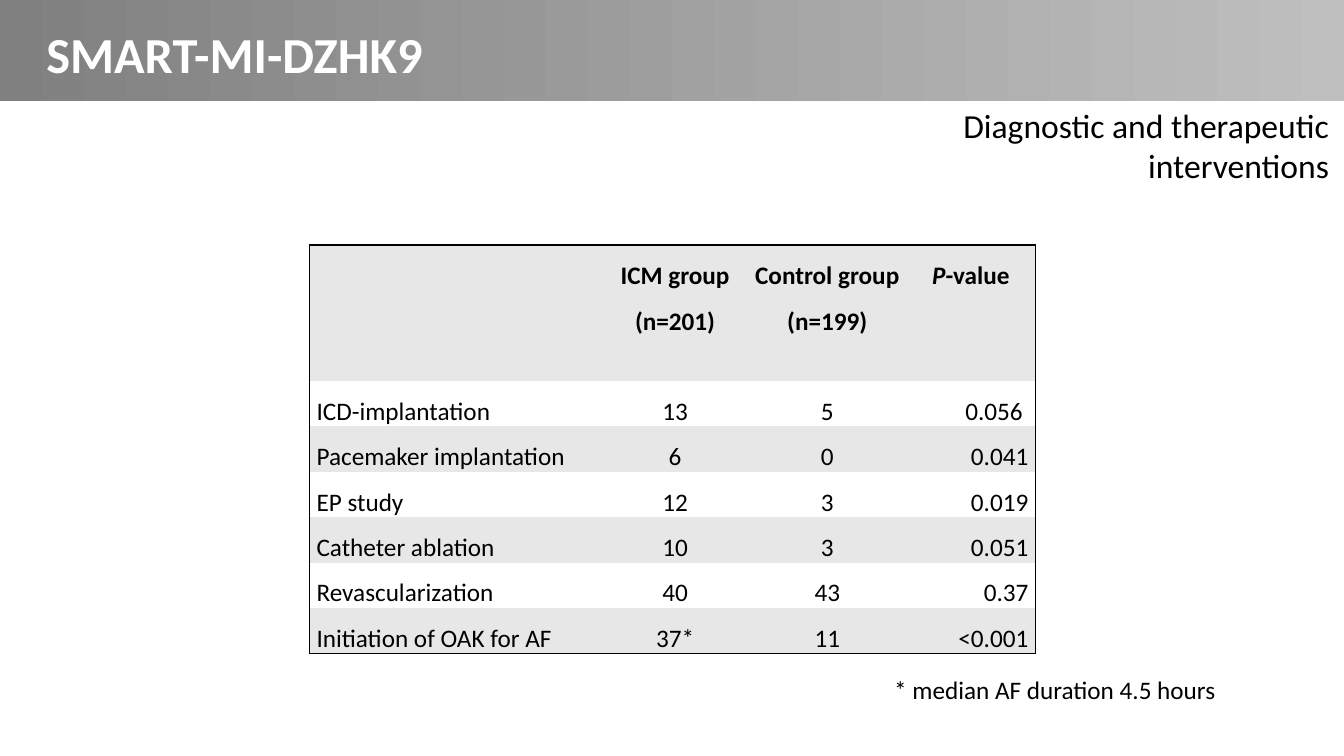
from dataclasses import dataclass

from lxml.etree import SubElement
from pptx import Presentation
from pptx.dml.color import RGBColor
from pptx.enum.shapes import MSO_SHAPE
from pptx.enum.text import MSO_ANCHOR, PP_ALIGN
from pptx.oxml.ns import qn
from pptx.slide import Slide
from pptx.table import _Cell
from pptx.text.text import TextFrame, _Paragraph
from pptx.util import Inches, Length, Pt

BLACK = RGBColor(0x00, 0x00, 0x00)
WHITE = RGBColor(0xFF, 0xFF, 0xFF)
BAND = RGBColor(0xE7, 0xE7, 0xE7)
BAR_DARK = RGBColor(0x80, 0x80, 0x80)
BAR_LIGHT = RGBColor(0xBF, 0xBF, 0xBF)

GRID_COLUMNS, GRID_ROWS = 133.3, 75
COLUMN_WIDTHS = (29, 14.5, 15.7, 12.8)
HEADER_ROWS, BODY_ROWS = 13.5, 4.5


@dataclass(frozen=True)
class Area:
    """Place on the slide, in grid columns and rows."""
    column: float
    row: float
    columns: float
    rows: float


@dataclass(frozen=True)
class Label:
    text: str
    area: Area
    size: float
    color: RGBColor = BLACK
    bold: bool = False
    align: PP_ALIGN = PP_ALIGN.RIGHT
    padded: bool = True


@dataclass(frozen=True)
class Intervention:
    name: str
    icm: str
    control: str
    p_value: str


LABELS = (
    Label("SMART-MI-DZHK9", Area(4.6, 2.3, 102.2, 6.1), 36, WHITE, True, PP_ALIGN.LEFT, False),
    Label("Diagnostic and therapeutic interventions", Area(76.8, 9.9, 56, 9), 24),
    Label("* median AF duration 4.5 hours ", Area(71.6, 66.4, 50.5, 4), 18),
)
HEADERS = ((), ("ICM group", "(n=201)"), ("Control group", "(n=199)"), ("P", "-value"))
INTERVENTIONS = (
    Intervention("ICD-implantation", "13", "5", "0.056 "),
    Intervention("Pacemaker implantation", "6", "0", "0.041"),
    Intervention("EP study", "12", "3", "0.019"),
    Intervention("Catheter ablation", "10", "3", "0.051"),
    Intervention("Revascularization", "40", "43", "0.37"),
    Intervention("Initiation of OAK for AF", "37*", "11", "<0.001"),
)
BODY_ALIGNS = (PP_ALIGN.LEFT, PP_ALIGN.CENTER, PP_ALIGN.CENTER, PP_ALIGN.RIGHT)


def grid(cells: float) -> Length:
    return Inches(cells / 10)


def place(area: Area) -> tuple[Length, ...]:
    return tuple(grid(cells) for cells in (area.column, area.row, area.columns, area.rows))


def write(paragraph: _Paragraph, text: str, *, size: float = 18, color: RGBColor = BLACK,
          bold: bool = False, italic: bool = False, align: PP_ALIGN = PP_ALIGN.CENTER,
          spacing: float = 1.0) -> None:
    paragraph.alignment = align
    paragraph.line_spacing = spacing
    run = paragraph.add_run()
    run.text = text
    run.font.name = "Calibri"
    run.font.size = Pt(size)
    run.font.color.rgb = color
    run.font.bold = bold
    run.font.italic = italic


def add_bar(slide: Slide) -> None:
    bar = slide.shapes.add_shape(MSO_SHAPE.RECTANGLE, *place(Area(0, 0, GRID_COLUMNS, 10)))
    bar.shadow.inherit = False
    bar.line.fill.background()
    bar.fill.gradient()
    bar.fill.gradient_angle = 0
    for stop, color, position in zip(bar.fill.gradient_stops, (BAR_DARK, BAR_LIGHT), (0, 1)):
        stop.color.rgb = color
        stop.position = position


def add_label(slide: Slide, label: Label) -> None:
    frame = slide.shapes.add_textbox(*place(label.area)).text_frame
    frame.word_wrap = True
    if not label.padded:
        frame.margin_left = frame.margin_right = frame.margin_top = frame.margin_bottom = 0
    write(frame.paragraphs[0], label.text, size=label.size, color=label.color,
          bold=label.bold, align=label.align)


def style_cell(cell: _Cell, fill: RGBColor, edges: dict[str, bool]) -> None:
    cell.margin_left = cell.margin_right = Inches(0.07)
    cell.margin_top = cell.margin_bottom = 0
    cell.vertical_anchor = MSO_ANCHOR.TOP
    properties = cell._tc.get_or_add_tcPr()
    # Borders come before the fill in the cell properties
    for side, drawn in edges.items():
        line = SubElement(properties, qn(f"a:ln{side}"), w=str(Pt(1) if drawn else 0))
        paint = SubElement(line, qn("a:solidFill" if drawn else "a:noFill"))
        if drawn:
            SubElement(paint, qn("a:srgbClr"), val=str(BLACK))
    cell.fill.solid()
    cell.fill.fore_color.rgb = fill


def write_header(frame: TextFrame, parts: tuple[str, ...]) -> None:
    is_p_value = parts[:1] == ("P",)
    for index, part in enumerate(parts):
        new_line = index > 0 and not is_p_value
        paragraph = frame.add_paragraph() if new_line else frame.paragraphs[0]
        write(paragraph, part, bold=True, italic=part == "P", spacing=1.5)


def add_interventions_table(slide: Slide) -> None:
    row_count, column_count = len(INTERVENTIONS) + 1, len(COLUMN_WIDTHS)
    height = HEADER_ROWS + BODY_ROWS * len(INTERVENTIONS)
    area = Area(30.7, 24.3, sum(COLUMN_WIDTHS), height)
    table = slide.shapes.add_table(row_count, column_count, *place(area)).table
    table.first_row = table.horz_banding = False
    for column, width in zip(table.columns, COLUMN_WIDTHS):
        column.width = grid(width)
    for index, row in enumerate(table.rows):
        row.height = grid(BODY_ROWS if index else HEADER_ROWS)
        for position, cell in enumerate(row.cells):
            style_cell(cell, WHITE if index % 2 else BAND, {
                "L": position == 0, "R": position == column_count - 1,
                "T": index == 0, "B": index == row_count - 1})

    # Header row
    for position, parts in enumerate(HEADERS):
        write_header(table.cell(0, position).text_frame, parts)

    # One row for each intervention
    for index, item in enumerate(INTERVENTIONS, start=1):
        values = (item.name, item.icm, item.control, item.p_value)
        for position, (value, align) in enumerate(zip(values, BODY_ALIGNS)):
            paragraph = table.cell(index, position).text_frame.paragraphs[0]
            write(paragraph, value, align=align, spacing=1.5)


def main() -> None:
    presentation = Presentation()
    presentation.slide_width = grid(GRID_COLUMNS)
    presentation.slide_height = grid(GRID_ROWS)
    slide = presentation.slides.add_slide(presentation.slide_layouts[6])
    add_bar(slide)
    for label in LABELS:
        add_label(slide, label)
    add_interventions_table(slide)
    presentation.save("out.pptx")


if __name__ == "__main__":
    main()
